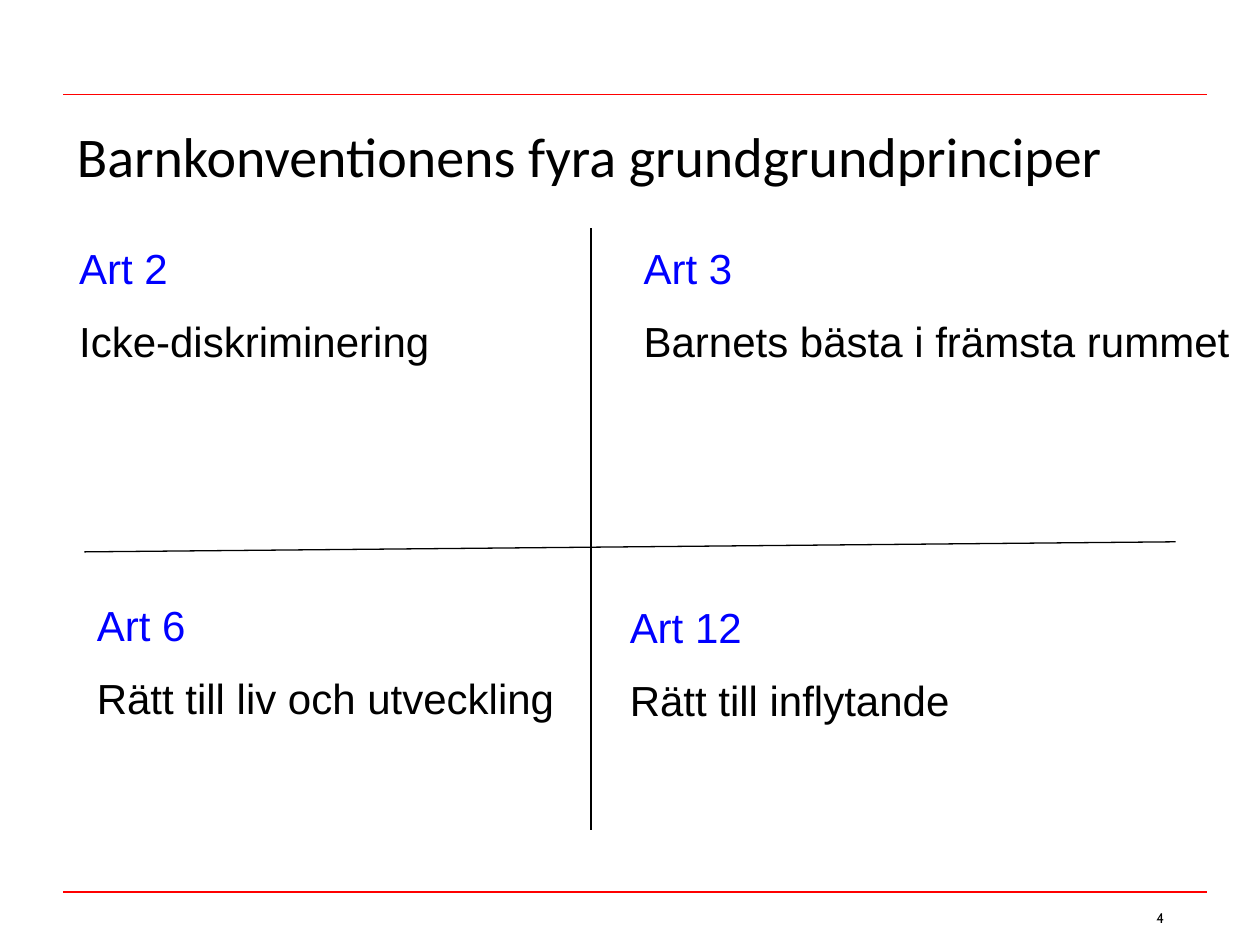
from lxml import etree
from pptx import Presentation
from pptx.dml.color import RGBColor
from pptx.enum.shapes import MSO_CONNECTOR
from pptx.enum.text import MSO_ANCHOR, MSO_AUTO_SIZE, PP_ALIGN
from pptx.oxml.ns import qn
from pptx.util import Inches, Pt

STRAIGHT = MSO_CONNECTOR.STRAIGHT
MIDDLE = MSO_ANCHOR.MIDDLE
NO_FIT = MSO_AUTO_SIZE.NONE
LEFT = PP_ALIGN.LEFT
TITLE_ONLY = 5

COLORS = {"rule": "FF0000", "article": "0000FF", "text": "000000"}


def write(paragraph, text, font="Arial", size=24, color="text", before=0):
    """Put formatted text into a paragraph."""
    paragraph.alignment = LEFT
    paragraph.space_before = Pt(before)
    run = paragraph.add_run()
    run.text = text
    run.font.name = font
    run.font.size = Pt(size)
    run.font.color.rgb = RGBColor.from_string(COLORS[color])


class SlideBuilder:
    def __init__(self, slide):
        self.slide = slide

    def frame(self, shape, wrap=True):
        frame = shape.text_frame
        frame.word_wrap = wrap
        frame.auto_size = NO_FIT
        frame.vertical_anchor = MIDDLE
        return frame

    def title(self, text, left, top, width, height):
        title = self.slide.shapes.title
        title.left, title.top = Inches(left), Inches(top)
        title.width, title.height = Inches(width), Inches(height)
        write(self.frame(title).paragraphs[0], text, font="Calibri", size=32)

    def text_box(self, left, top, width, height, wrap=True):
        box = self.slide.shapes.add_textbox(
            Inches(left), Inches(top), Inches(width), Inches(height))
        return self.frame(box, wrap)

    def line(self, x1, y1, x2, y2, color="text", width=0.75):
        line = self.slide.shapes.add_connector(
            STRAIGHT, Inches(x1), Inches(y1), Inches(x2), Inches(y2))
        line.line.color.rgb = RGBColor.from_string(COLORS[color])
        line.line.width = Pt(width)
        etree.SubElement(line._element.spPr, qn("a:effectLst"))

    def article(self, heading, principle, left, top):
        frame = self.text_box(left, top, 5, 1.11)
        write(frame.paragraphs[0], heading, color="article")
        write(frame.add_paragraph(), principle, before=13)

    def page_number(self, number, left, top):
        frame = self.text_box(left, top, 0.34, 0.23, wrap=False)
        write(frame.paragraphs[0], number, font="Cabin", size=8)


def main():
    prs = Presentation()
    prs.slide_width, prs.slide_height = Inches(10), Inches(7.5)
    builder = SlideBuilder(
        prs.slides.add_slide(prs.slide_layouts[TITLE_ONLY]))

    # Red rules and page number
    for rule_y in (0.75, 7.08):
        builder.line(0.5, rule_y, 9.58, rule_y, color="rule", width=1)
    builder.page_number("4", 9.08, 7.17)

    # Cross that separates the four principles
    builder.line(0.67, 4.38, 9.33, 4.3)
    builder.line(4.69, 1.81, 4.69, 6.59)

    # Title and principles
    builder.title("Barnkonventionens fyra grundgrundprinciper",
                  0.51, 0.91, 8.82, 0.64)
    articles = [
        ("Art 2", "Icke-diskriminering", 0.53, 1.86),
        ("Art 3", "Barnets bästa i främsta rummet", 5.01, 1.86),
        ("Art 6", "Rätt till liv och utveckling", 0.67, 4.69),
        ("Art 12", "Rätt till inflytande", 4.9, 4.71),
    ]
    for article in articles:
        builder.article(*article)

    prs.save("out.pptx")


if __name__ == "__main__":
    main()
